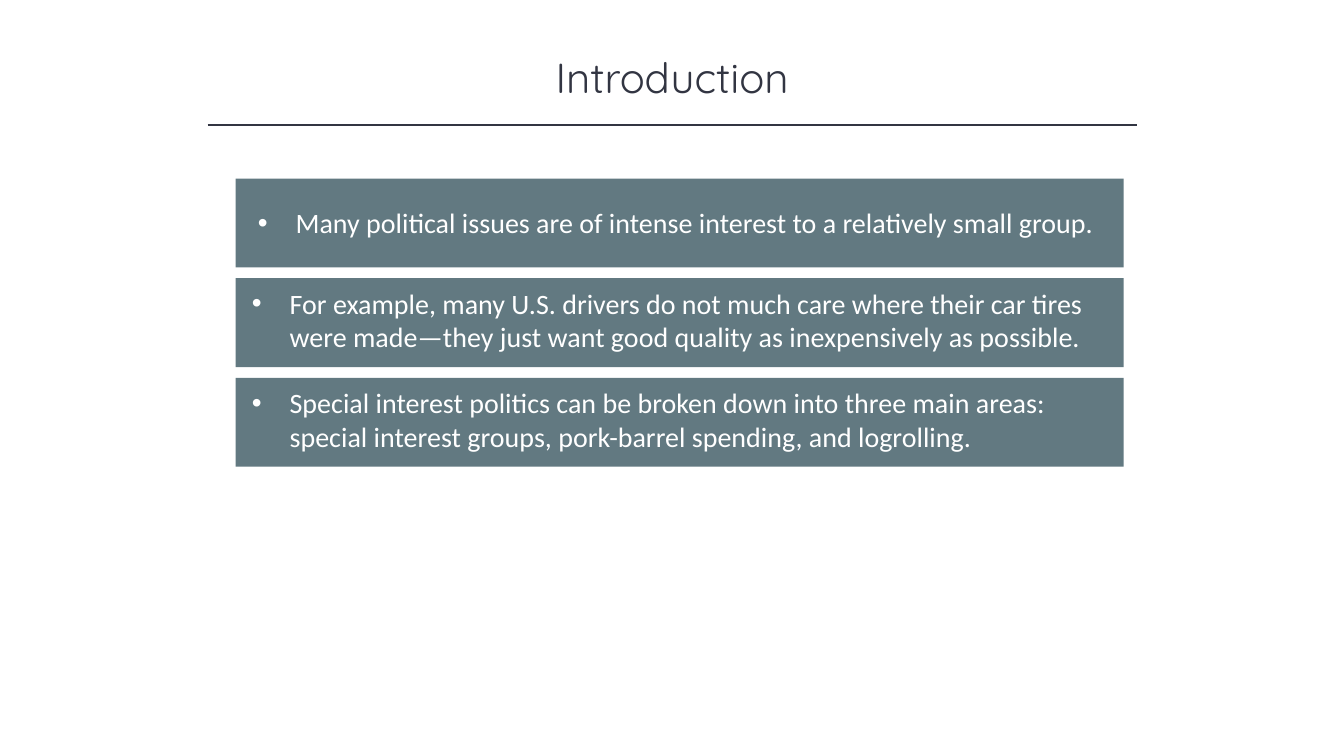
from dataclasses import dataclass

from lxml import etree
from pptx import Presentation
from pptx.dml.color import RGBColor
from pptx.enum.shapes import MSO_CONNECTOR, MSO_SHAPE
from pptx.enum.text import MSO_ANCHOR, MSO_AUTO_SIZE, PP_ALIGN
from pptx.oxml.ns import qn
from pptx.shapes.autoshape import Shape
from pptx.shapes.group import GroupShape
from pptx.slide import Slide
from pptx.text.text import _Paragraph
from pptx.util import Cm, Pt

INK = RGBColor(0x32, 0x35, 0x42)
SLATE = RGBColor(0x62, 0x79, 0x81)
WHITE = RGBColor(0xFF, 0xFF, 0xFF)

RECTANGLE = MSO_SHAPE.RECTANGLE
STRAIGHT = MSO_CONNECTOR.STRAIGHT
TOP = MSO_ANCHOR.TOP
FIT_SHAPE = MSO_AUTO_SIZE.SHAPE_TO_FIT_TEXT
LEFT = PP_ALIGN.LEFT
CENTER = PP_ALIGN.CENTER

BAND_LEFT, BAND_TOP = 5.94, 4.5
BAND_WIDTH, BAND_HEIGHT = 22.38, 2.24
BAND_PITCH = 2.51
POINT_WIDTH = 21.69
BULLET_INDENT = Cm(0.95)


@dataclass(frozen=True)
class Point:
    """A bulleted statement; its inset from the band and height are in cm."""
    text: str
    inset_left: float = 0.16
    inset_top: float = 0.08
    height: float = 1.96


POINTS = (
    Point("Many political issues are of intense interest to a relatively small group.",
          inset_left=0.31, inset_top=0.56, height=1.12),
    Point("For example, many U.S. drivers do not much care where their car tires "
          "were made—they just want good quality as inexpensively as possible."),
    Point("Special interest politics can be broken down into three main areas: "
          "special interest groups, pork-barrel spending, and logrolling."),
)


def style_text(paragraph: _Paragraph, font_name: str, size: int, color: RGBColor) -> None:
    paragraph.font.name = font_name
    paragraph.font.size = Pt(size)
    paragraph.font.color.rgb = color


def add_title(slide: Slide, text: str) -> None:
    title = slide.shapes.add_textbox(Cm(4.24), Cm(1.17), Cm(25.4), Cm(1.55))
    frame = title.text_frame
    frame.word_wrap = True
    frame.auto_size = FIT_SHAPE
    frame.text = text
    paragraph = frame.paragraphs[0]
    paragraph.alignment = CENTER
    style_text(paragraph, "Quicksand", 30, INK)


def add_title_rule(slide: Slide) -> None:
    rule = slide.shapes.add_connector(STRAIGHT, Cm(5.23), Cm(3.15), Cm(28.65), Cm(3.15))
    rule.line.color.rgb = INK
    rule.line.width = Pt(1)
    etree.SubElement(rule._element.spPr, qn("a:effectLst"))


def add_slate_box(group: GroupShape, left: float, top: float,
                  width: float, height: float) -> Shape:
    box = group.shapes.add_shape(RECTANGLE, Cm(left), Cm(top), Cm(width), Cm(height))
    box.shadow.inherit = False
    box.fill.solid()
    box.fill.fore_color.rgb = SLATE
    box.line.fill.background()
    return box


def add_bullet(paragraph: _Paragraph) -> None:
    properties = paragraph._p.get_or_add_pPr()
    properties.set("marL", str(BULLET_INDENT))
    properties.set("indent", str(-BULLET_INDENT))
    etree.SubElement(properties, qn("a:buFont"), typeface="Arial")
    etree.SubElement(properties, qn("a:buChar"), char="•")


def add_point(slide: Slide, point: Point, top: float) -> None:
    """Group a slate band with the bulleted statement lying on it."""
    group = slide.shapes.add_group_shape()
    add_slate_box(group, BAND_LEFT, top, BAND_WIDTH, BAND_HEIGHT)
    statement = add_slate_box(group, BAND_LEFT + point.inset_left, top + point.inset_top,
                              POINT_WIDTH, point.height)
    frame = statement.text_frame
    frame.word_wrap = True
    frame.auto_size = FIT_SHAPE
    frame.vertical_anchor = TOP
    frame.text = point.text
    paragraph = frame.paragraphs[0]
    paragraph.alignment = LEFT
    add_bullet(paragraph)
    style_text(paragraph, "Calibri", 20, WHITE)


def main() -> None:
    presentation = Presentation()
    presentation.slide_width = Cm(33.87)
    presentation.slide_height = Cm(19.05)
    slide = presentation.slides.add_slide(presentation.slide_layouts[6])

    add_title(slide, "Introduction")
    add_title_rule(slide)
    for row, point in enumerate(POINTS):
        add_point(slide, point, BAND_TOP + row * BAND_PITCH)

    presentation.save("out.pptx")


if __name__ == "__main__":
    main()
